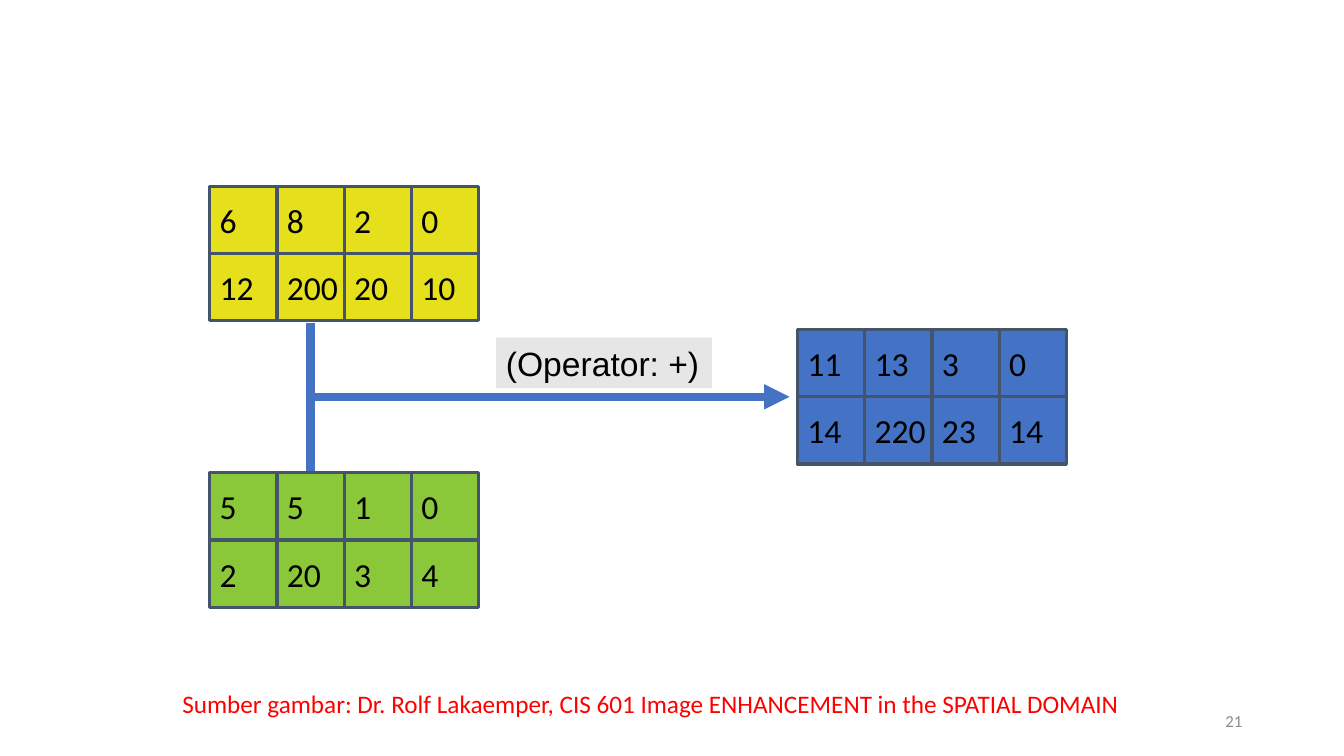
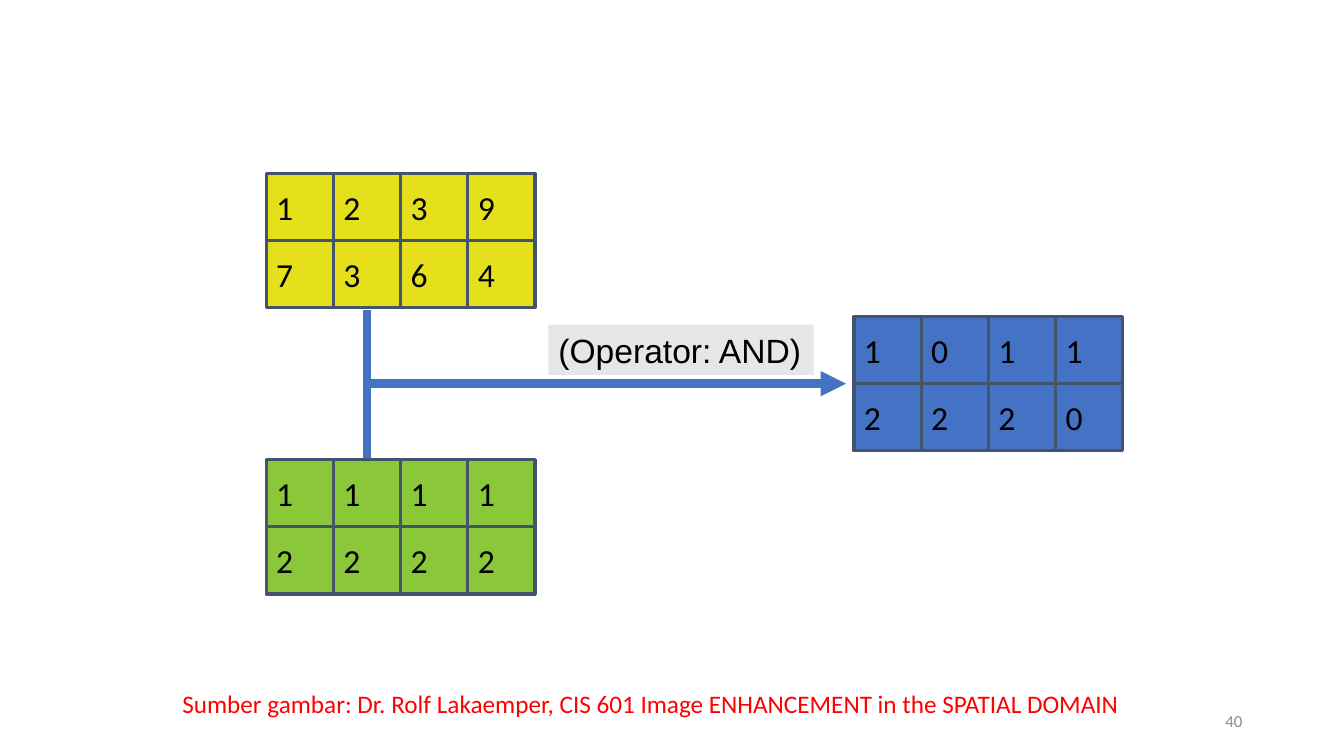
import pptx
import pptx.util
import pptx.dml.color
import pptx.enum.shapes
import pptx.enum.text
import pptx.oxml
import pptx.oxml.ns

Inches, Pt = pptx.util.Inches, pptx.util.Pt
ALIGN = pptx.enum.text.PP_ALIGN
ANCHOR = pptx.enum.text.MSO_ANCHOR
FIT = pptx.enum.text.MSO_AUTO_SIZE
RECT = pptx.enum.shapes.MSO_SHAPE.RECTANGLE
STRAIGHT = pptx.enum.shapes.MSO_CONNECTOR.STRAIGHT

COLORS = {
    "first": "E5E01B", "second": "8AC739", "result": "4472C4",
    "edge": "44546A", "label": "E7E6E6", "text": "000000",
    "credit": "FF0000", "number": "8C8C8C",
}
CREDIT = ("Sumber gambar: Dr. Rolf Lakaemper, CIS 601 Image ENHANCEMENT "
          "in the SPATIAL DOMAIN")
SLIDES = [
    {"origin": (2.08, 1.85), "number": "21",
     "label": "(Operator: +)", "label_box": (4.92, 2.14),
     "first": [[6, 8, 2, 0], [12, 200, 20, 10]],
     "second": [[5, 5, 1, 0], [2, 20, 3, 4]],
     "result": [[11, 13, 3, 0], [14, 220, 23, 14]]},
    {"origin": (2.64, 1.72), "number": "40",
     "label": "(Operator: AND)", "label_box": (5.44, 2.63),
     "first": [[1, 2, 3, 9], [7, 3, 6, 4]],
     "second": [[1, 1, 1, 1], [2, 2, 2, 2]],
     "result": [[1, 0, 1, 1], [2, 2, 2, 0]]},
]

# Lengths in inches; offsets are from the top left of the first matrix.
CELL = 2 / 3
DROP = 2.84
OFFSETS = {"first": (0, 0), "second": (0, DROP), "result": (5.83, DROP / 2)}
GAP = 0.02
JOIN = 1.5 * CELL
MIDDLE = DROP / 2 + CELL
TIP = 5.75
LABEL_DROP = 1.5


def color(name):
    return pptx.dml.color.RGBColor.from_string(COLORS[name])


def write(shape, text, size, ink, font="Calibri", align=ALIGN.LEFT,
          anchor=ANCHOR.TOP, wrap=True, fit=FIT.NONE):
    frame = shape.text_frame
    frame.word_wrap, frame.auto_size = wrap, fit
    frame.vertical_anchor = anchor
    para = frame.paragraphs[0]
    para.text, para.alignment = text, align
    para.font.size, para.font.name = Pt(size), font
    para.font.color.rgb = color(ink)


def add_rect(slide, box, fill, edge=None):
    rect = slide.shapes.add_shape(RECT, *map(Inches, box))
    rect.shadow.inherit = False
    rect.fill.solid()
    rect.fill.fore_color.rgb = color(fill)
    if edge:
        rect.line.color.rgb = color(edge)
        rect.line.width = Pt(2.25)
    else:
        rect.line.fill.background()
    return rect


def add_matrix(slide, rows, left, top, fill):
    for r, row in enumerate(rows):
        for c, value in enumerate(row):
            box = (left + c * CELL, top + r * CELL, CELL, CELL)
            cell = add_rect(slide, box, fill, "edge")
            write(cell, str(value), 24, "text", anchor=ANCHOR.MIDDLE, wrap=False)


def add_line(slide, start, end, arrow=False):
    line = slide.shapes.add_connector(STRAIGHT, *map(Inches, start + end))
    line.line.color.rgb = color("result")
    line.line.width = Pt(6)
    if arrow:
        head = pptx.oxml.parse_xml(
            f'<a:tailEnd {pptx.oxml.ns.nsdecls("a")} type="triangle"/>')
        line.line._get_or_add_ln().append(head)
    line._element.spPr.append(pptx.oxml.parse_xml(
        f'<a:effectLst {pptx.oxml.ns.nsdecls("a")}/>'))


def add_text(slide, box, text, size, ink, **style):
    write(slide.shapes.add_textbox(*map(Inches, box)), text, size, ink, **style)


def add_footer(slide, number):
    add_text(slide, (1.71, 6.78, 11.03, 0.71), CREDIT, 18, "credit")
    add_text(slide, (9.42, 6.95, 3, 0.4), number, 12, "number",
             align=ALIGN.RIGHT, anchor=ANCHOR.MIDDLE)


def add_diagram(slide, data):
    x, y = data["origin"]
    for name, (dx, dy) in OFFSETS.items():
        add_matrix(slide, data[name], x + dx, y + dy, name)
    joint = (x + JOIN, y + MIDDLE)
    add_line(slide, (x + JOIN, y + 2 * CELL + GAP), (x + JOIN, y + DROP - GAP))
    add_line(slide, joint, (x + TIP, y + MIDDLE), arrow=True)
    left, width = data["label_box"]
    label = add_rect(slide, (left, y + LABEL_DROP, width, 0.5), "label")
    write(label, data["label"], 24, "text", font="Arial", wrap=False,
          fit=FIT.SHAPE_TO_FIT_TEXT)


def main():
    deck = pptx.Presentation()
    deck.slide_width, deck.slide_height = Inches(13.33), Inches(7.5)
    for data in SLIDES:
        slide = deck.slides.add_slide(deck.slide_layouts[6])
        add_diagram(slide, data)
        add_footer(slide, data["number"])
    deck.save("out.pptx")


if __name__ == "__main__":
    main()
